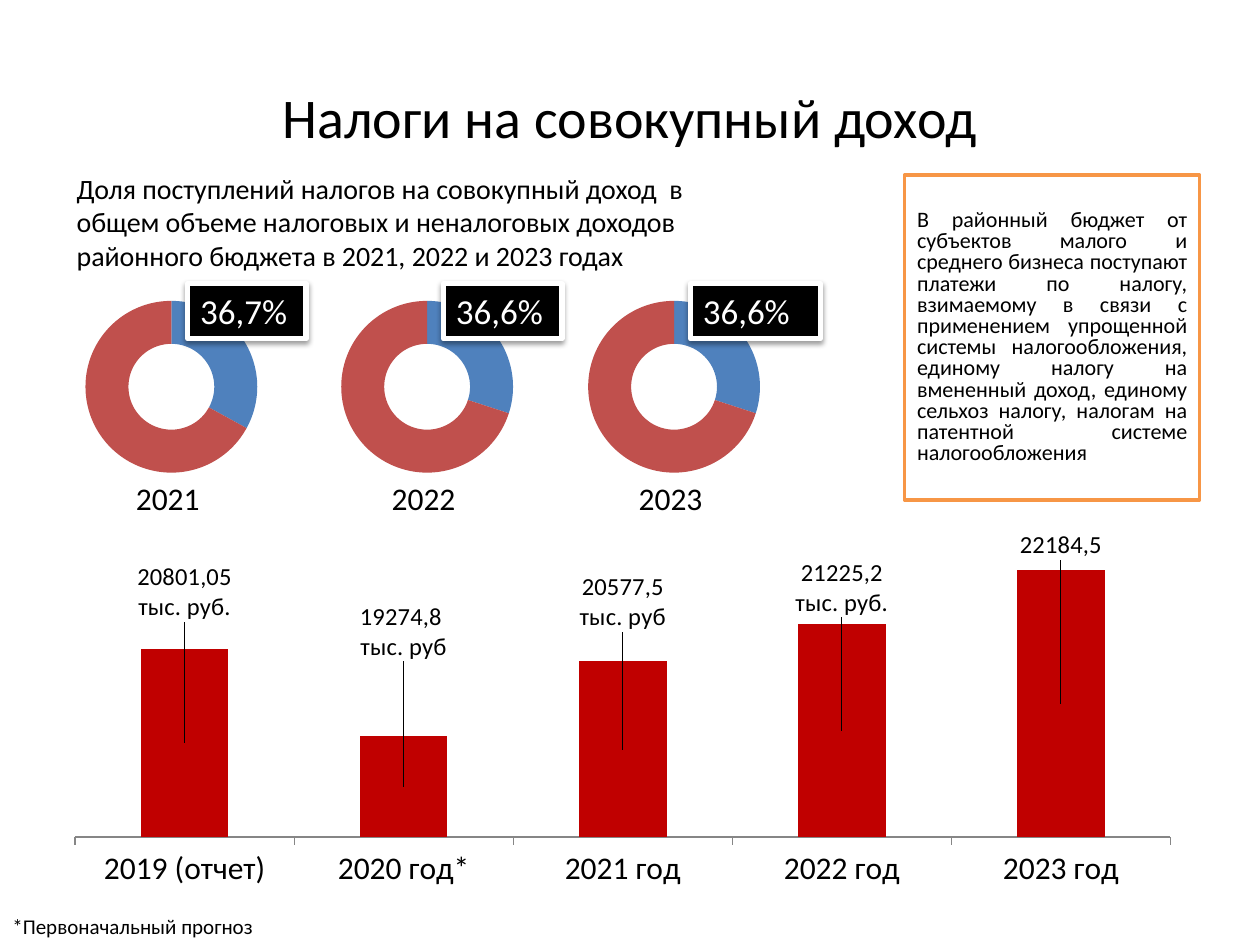
from lxml import etree
from pptx import Presentation
from pptx.chart.data import CategoryChartData
from pptx.dml.color import RGBColor
from pptx.enum import chart as ch, shapes, text
from pptx.oxml import parse_xml
from pptx.oxml.ns import nsdecls, qn
from pptx.util import Inches, Pt

# Content
TITLE = "Налоги на совокупный доход"
INTRO = ("Доля поступлений налогов на совокупный доход  в общем объеме налоговых "
         "и неналоговых доходов районного бюджета в 2021, 2022 и 2023 годах")
NOTE = ("В районный бюджет от субъектов малого и среднего бизнеса поступают платежи "
        "по налогу, взимаемому в связи с применением упрощенной системы "
        "налогообложения, единому налогу на вмененный доход, единому сельхоз налогу, "
        "налогам на патентной системе налогообложения")
FOOTNOTE = "*Первоначальный прогноз"
# year, tag, chart values, left edge, tag width
SHARES = [("2021", "36,7%", (33, 67), 0.54, 0.94),
          ("2022", "36,6%", (30, 70), 2.57, 0.94),
          ("2023", "36,6%", (30, 70), 4.53, 1.03)]
# category, value, label, label shift as a share of the chart
INCOME = [("2019 (отчет)", 20801.05, "20801,05\nтыс. руб.", (0, -0.39)),
          ("2020 год*", 19274.8, "19274,8 \nтыс. руб", (0, -0.4)),
          ("2021 год", 20577.5, "20577,5\nтыс. руб", (0, -0.38)),
          ("2022 год", 21225.2, "21225,2\nтыс. руб.", (0, -0.37)),
          ("2023 год", 22184.5, "22184,5", (0, -0.41))]
SLICES = ("4F81BD", "C0504D")
FONT = "Calibri"


def rgb(value):
    return RGBColor.from_string(value)


def fill(part, color):
    part.fill.solid()
    part.fill.fore_color.rgb = rgb(color)


def set_font(font, size, color="000000"):
    font.name, font.size, font.color.rgb = FONT, Pt(size), rgb(color)


def write(sp, words, size, color="000000", align=text.PP_ALIGN.LEFT,
          anchor=text.MSO_ANCHOR.TOP, spacing=None, wrap=True):
    tf = sp.text_frame
    tf.word_wrap, tf.vertical_anchor = wrap, anchor
    p = tf.paragraphs[0]
    p.alignment, p.line_spacing = align, spacing
    r = p.add_run()
    r.text = words
    set_font(r.font, size, color)
    return sp


def textbox(box, words, size, **fmt):
    return write(s.shapes.add_textbox(*map(Inches, box)), words, size, **fmt)


def rectangle(box, color, line, width):
    sp = s.shapes.add_shape(shapes.MSO_SHAPE.RECTANGLE, *map(Inches, box))
    sp.shadow.inherit = False
    fill(sp, color)
    sp.line.color.rgb, sp.line.width = rgb(line), Pt(width)
    return sp


def add_shadow(sp):
    effects = sp._element.spPr.find(qn("a:effectLst"))
    effects.append(parse_xml(
        f'<a:outerShdw {nsdecls("a")} blurRad="{Pt(3.1)}" dist="{Pt(1.6)}" '
        'dir="5400000" rotWithShape="0"><a:srgbClr val="000000">'
        '<a:alpha val="38000"/></a:srgbClr></a:outerShdw>'))


def add_layout(parent, index, **values):
    """Insert a manual chart layout as the child at the given index."""
    layout = etree.Element(qn("c:layout"))
    manual = etree.SubElement(layout, qn("c:manualLayout"))
    for tag, value in values.items():
        etree.SubElement(manual, qn("c:" + tag)).set("val", str(value))
    parent.insert(index, layout)


def add_chart(kind, box, cats, vals):
    data = CategoryChartData()
    data.categories = cats
    data.add_series("Series 1", vals)
    chart = s.shapes.add_chart(kind, *map(Inches, box), data).chart
    chart.has_legend = chart.has_title = False
    set_font(chart.font, 18)
    return chart


prs = Presentation()
prs.slide_width, prs.slide_height = Inches(10), Inches(7.5)
s = prs.slides.add_slide(prs.slide_layouts[5])

# Title and texts
title = s.shapes.title
title.left, title.top, title.width, title.height = map(Inches, (0.5, 0.3, 9, 1.25))
write(title, TITLE, 32, align=text.PP_ALIGN.CENTER, anchor=text.MSO_ANCHOR.MIDDLE)
textbox((0.51, 1.31, 5.55, 0.91), INTRO, 16)
note = rectangle((7.18, 1.39, 2.34, 2.58), "FFFFFF", "F79646", 2)
write(note, NOTE, 12.6, align=text.PP_ALIGN.JUSTIFY,
      anchor=text.MSO_ANCHOR.MIDDLE, spacing=0.8)

# Share rings with year and tag
for year, tag, vals, left, width in SHARES:
    ring = add_chart(ch.XL_CHART_TYPE.DOUGHNUT, (left, 2.25, 1.64, 1.64), ("1", "2"), vals)
    plot = ring.plots[0]
    plot._element.find(qn("c:holeSize")).set("val", "50")
    for i, color in enumerate(SLICES):
        fill(plot.series[0].points[i].format, color)
    textbox((left + 0.44, 3.75, 0.71, 0.4), year, 18, wrap=False)
    box = rectangle((left + 0.95, 2.25, width, 0.44), "000000", "FFFFFF", 3)
    add_shadow(box)
    write(box, tag, 20, color="FFFFFF")

# Income columns
cats, vals, labels, shifts = zip(*INCOME)
columns = add_chart(ch.XL_CHART_TYPE.COLUMN_STACKED, (0.47, 4.06, 9, 3.07), cats, vals)
plot = columns.plots[0]
plot.gap_width, plot.overlap, plot.vary_by_categories = 150, 100, False
area = columns._chartSpace.chart.plotArea
for old in area.findall(qn("c:layout")):
    area.remove(old)
add_layout(area, 0, layoutTarget="inner", xMode="edge", yMode="edge",
           x=0.014, y=0.104, w=0.966, h=0.738)
axis = columns.value_axis
axis.minimum_scale, axis.maximum_scale = 17500, 22500
axis.has_major_gridlines = axis.visible = False
axis = columns.category_axis
axis.major_tick_mark = ch.XL_TICK_MARK.OUTSIDE
axis.format.line.color.rgb = rgb("868686")
set_font(axis.tick_labels.font, 18)

series = plot.series[0]
fill(series.format, "C00000")
series.data_labels.show_value = True
set_font(series.data_labels.font, 14)
for i, (words, (dx, dy)) in enumerate(zip(labels, shifts)):
    tf = series.points[i].data_label.text_frame
    tf.text = words
    for p in tf.paragraphs:
        set_font(p.runs[0].font, 14)
for label, (dx, dy) in zip(series._element.iter(qn("c:dLbl")), shifts):
    add_layout(label, 1, x=dx, y=dy)

textbox((0, 7.2, 2.73, 0.3), FOOTNOTE, 12)

prs.save("out.pptx")
